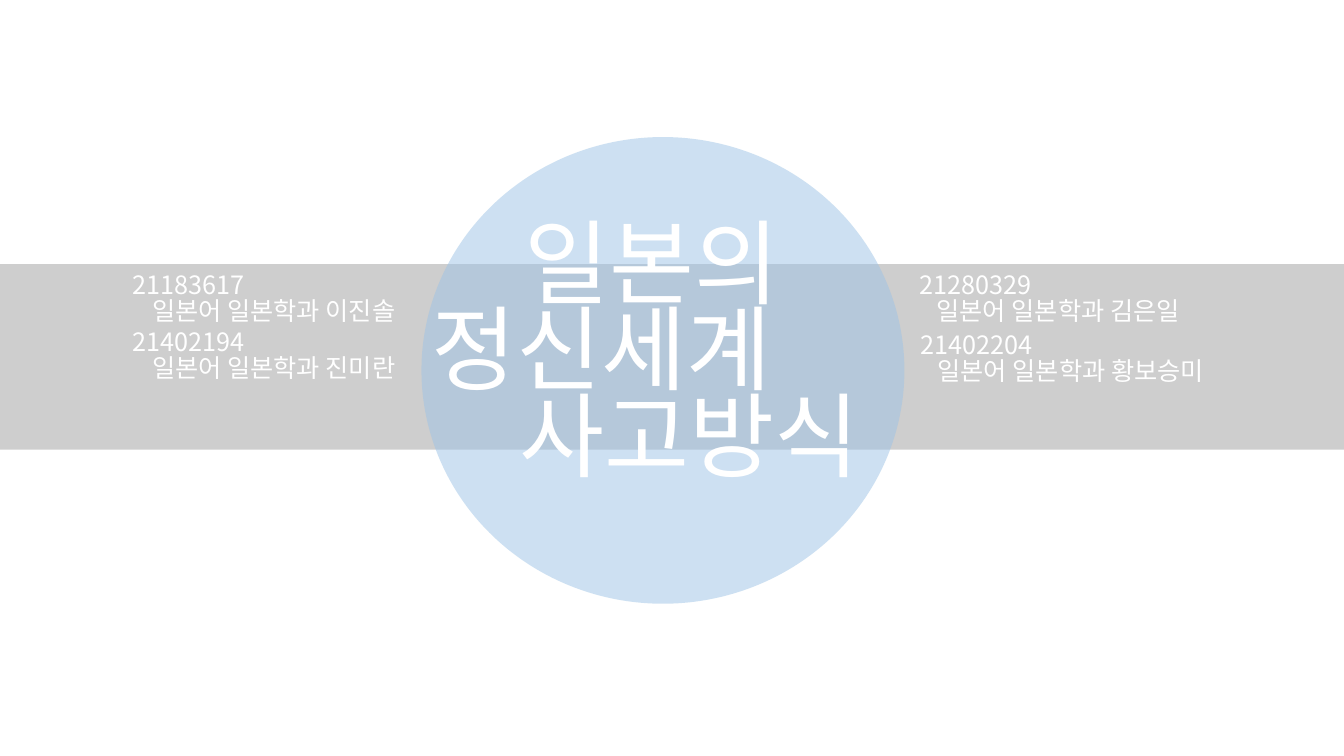
from lxml import etree
from pptx import Presentation
from pptx.dml.color import RGBColor
from pptx.enum.shapes import MSO_SHAPE
from pptx.enum.text import MSO_ANCHOR, MSO_AUTO_SIZE, PP_ALIGN
from pptx.oxml.ns import qn
from pptx.util import Inches, Pt

BAND, DISC = MSO_SHAPE.RECTANGLE, MSO_SHAPE.OVAL
TOP = MSO_ANCHOR.TOP
GROW = MSO_AUTO_SIZE.SHAPE_TO_FIT_TEXT
LEFT, CENTER = PP_ALIGN.LEFT, PP_ALIGN.CENTER
TITLE_ONLY = 5
FONT = "Noto Sans CJK KR"
WHITE = "FFFFFF"
TITLE_SIZE, NAME_SIZE = 66, 18
NAME_DROP = 0.26

# number, name, left of number, left of name, top of number, widths
STUDENTS = [
    ("21280329", "일본어 일본학과 김은일", 9.02, 9.19, 2.62, 4.21, 3.08),
    ("21402204", "일본어 일본학과 황보승미", 9.03, 9.2, 3.22, 4.21, 3.08),
    ("21183617", "일본어 일본학과 이진솔", 1.22, 1.41, 2.62, 4.51, 3.31),
    ("21402194", "일본어 일본학과 진미란", 1.22, 1.41, 3.19, 4.51, 3.31),
]


def color(value):
    return RGBColor.from_string(value)


def place(shape, left, top, width, height):
    shape.left, shape.top = Inches(left), Inches(top)
    shape.width, shape.height = Inches(width), Inches(height)


def add_tint(page, kind, bounds, fill, opacity):
    """Add a borderless, partly transparent shape."""
    shape = page.shapes.add_shape(kind, *map(Inches, bounds))
    shape.shadow.inherit = False
    shape.fill.solid()
    shape.fill.fore_color.rgb = color(fill)
    shape.line.fill.background()
    tone = shape.element.spPr.find(".//" + qn("a:srgbClr"))
    etree.SubElement(tone, qn("a:alpha"), val=str(opacity * 1000))
    return shape


def write(box, text, size, align=LEFT):
    """Fill a box with one line of white text."""
    frame = box.text_frame
    frame.text = text
    frame.word_wrap = True
    frame.auto_size = GROW
    frame.vertical_anchor = TOP
    para = frame.paragraphs[0]
    para.alignment = align
    para.font.size = Pt(size)
    para.font.color.rgb = color(WHITE)
    para.font.name = FONT
    # Korean glyphs take the East Asian typeface
    for properties in box.element.iter(qn("a:defRPr")):
        etree.SubElement(properties, qn("a:ea"), typeface=FONT)


def add_text(page, text, bounds, size):
    box = page.shapes.add_textbox(*map(Inches, bounds))
    write(box, text, size)


def add_student(page, number, name, number_left, name_left, top,
                number_width, name_width):
    add_text(page, number, (number_left, top, number_width, 0.4), NAME_SIZE)
    add_text(page, name, (name_left, top + NAME_DROP, name_width, 0.4), NAME_SIZE)


def main():
    deck = Presentation()
    deck.slide_width, deck.slide_height = Inches(13.33), Inches(7.5)
    page = deck.slides.add_slide(deck.slide_layouts[TITLE_ONLY])

    # Band and circle
    add_tint(page, BAND, (0, 2.62, 13.33, 1.84), "A6A6A6", 54)
    circle = add_tint(page, DISC, (4.18, 1.36, 4.79, 4.63), "9DC3E6", 50)

    # Staggered title, in front of the circle
    title = page.shapes.title
    circle.element.addnext(title.element)
    place(title, -0.2, 1.98, 13.33, 1.21)
    write(title, "일본의", TITLE_SIZE, CENTER)
    add_text(page, "정신세계", (4.18, 2.84, 5, 1.21), TITLE_SIZE)
    add_text(page, "사고방식", (5.05, 3.7, 3.89, 1.21), TITLE_SIZE)

    # Student numbers and names
    for student in STUDENTS:
        add_student(page, *student)

    deck.save("out.pptx")


if __name__ == "__main__":
    main()
